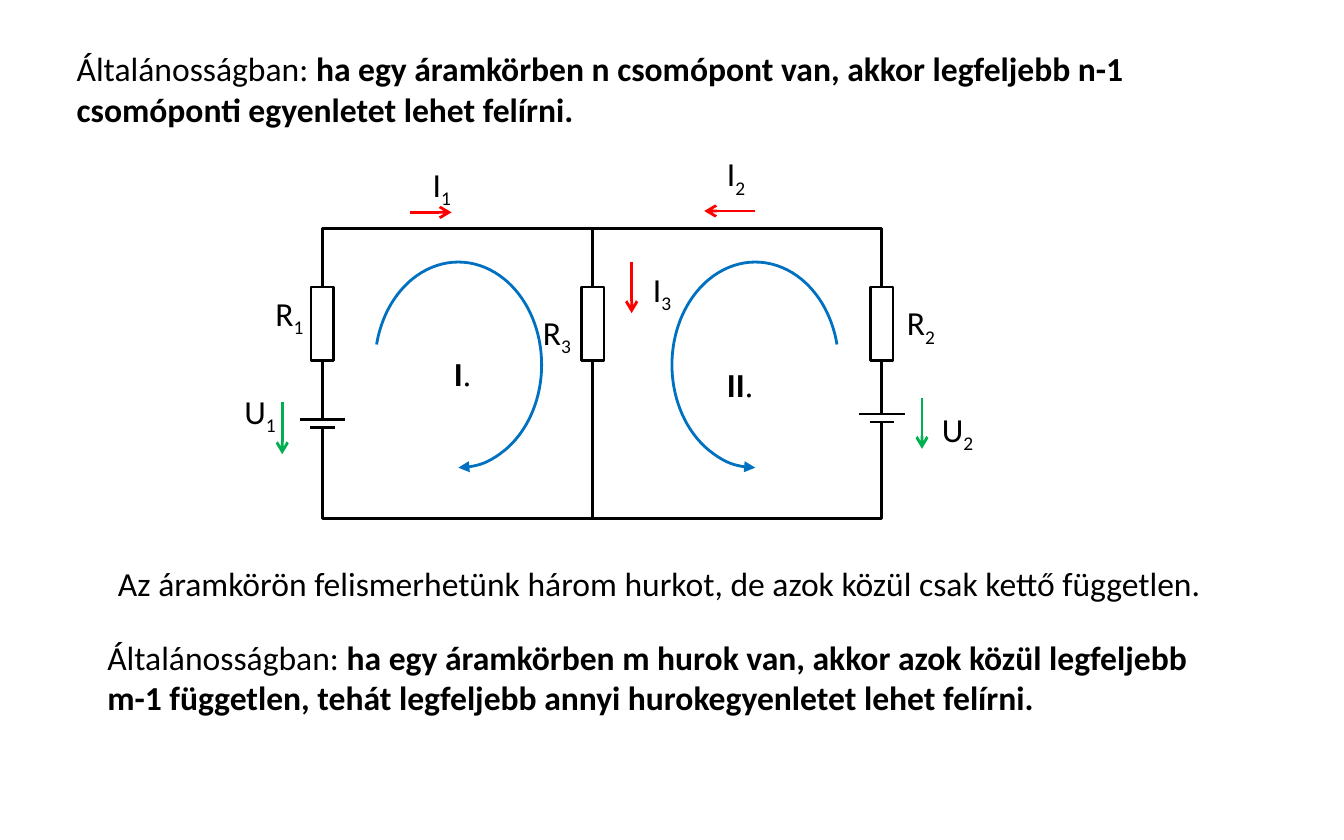
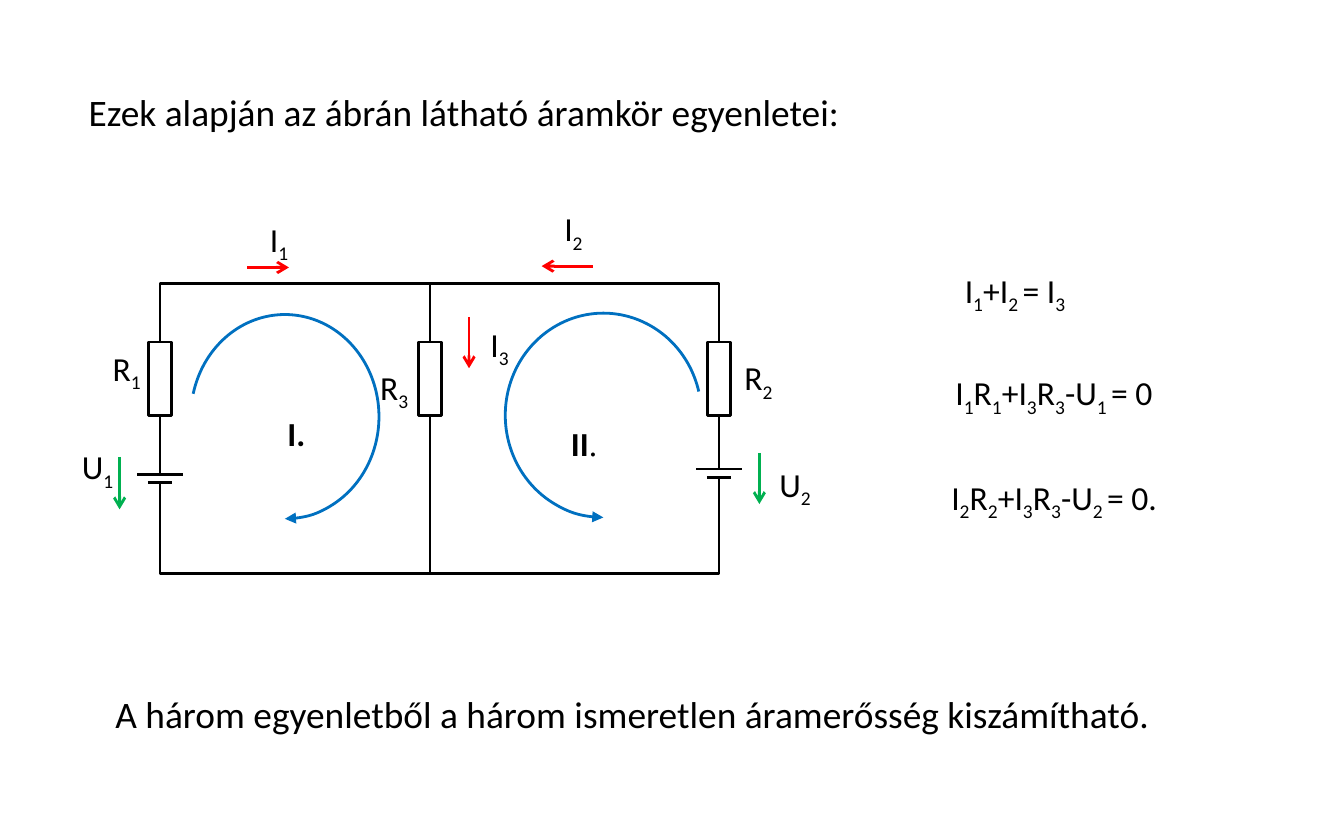
from dataclasses import dataclass

from pptx import Presentation
from pptx.dml.color import RGBColor
from pptx.enum import shapes, text
from pptx.oxml.ns import qn
from pptx.util import Inches, Pt
from lxml import etree


@dataclass(frozen=True)
class Theme:
    font: str = "Calibri"
    dot_font: str = "Times New Roman"
    ink: str = "000000"
    paper: str = "FFFFFF"
    current: str = "FF0000"
    voltage: str = "00B050"
    loop: str = "0070C0"
    body_size: int = 18
    large_size: int = 20
    line: float = 1.5
    thin_line: float = 0.75


THEME = Theme()
RECTANGLE = shapes.MSO_SHAPE.RECTANGLE


# Text helpers
def with_subscripts(formula):
    """Every second piece between bars is a subscript."""
    return [(piece, "sub" if index % 2 else "")
            for index, piece in enumerate(formula.split("|")) if piece]


def write(box, spans, size=THEME.body_size, space_after=0):
    frame = box.text_frame
    frame.word_wrap = True
    frame.vertical_anchor = text.MSO_ANCHOR.TOP
    para = frame.paragraphs[0]
    para.alignment = text.PP_ALIGN.LEFT
    para.space_after = Pt(space_after)
    for words, style in spans:
        span = para.add_run()
        span.text = words
        span.font.name = THEME.dot_font if style == "dot" else THEME.font
        span.font.size = Pt(size)
        span.font.bold = style == "bold"
        span.font.color.rgb = RGBColor.from_string(THEME.ink)
        if style == "sub":
            span._r.get_or_add_rPr().set("baseline", "-25000")


def add_title(page, area, spans, size):
    title = page.shapes.title
    title.left, title.top, title.width, title.height = map(Inches, area)
    write(title, spans, size)
    title.text_frame.auto_size = text.MSO_AUTO_SIZE.NONE


def add_text(page, area, spans, size=THEME.body_size):
    box = page.shapes.add_textbox(*map(Inches, area))
    write(box, spans, size)
    box.text_frame.auto_size = text.MSO_AUTO_SIZE.SHAPE_TO_FIT_TEXT


# Drawing helpers
def set_line(shape, color, width=THEME.line):
    shape.line.color.rgb = RGBColor.from_string(color)
    shape.line.width = Pt(width)


def add_arrowhead(shape, end, kind):
    etree.SubElement(shape.line._get_or_add_ln(), qn(f"a:{end}"), type=kind)


def add_block(parent, area, line=None, width=THEME.line):
    block = parent.shapes.add_shape(RECTANGLE, *map(Inches, area))
    block.shadow.inherit = False
    block.fill.solid()
    block.fill.fore_color.rgb = RGBColor.from_string(THEME.paper)
    if line:
        set_line(block, line, width)
    else:
        block.line.fill.background()
    return block


def add_line(parent, start, end, color=THEME.ink, arrow=False):
    line = parent.shapes.add_connector(
        shapes.MSO_CONNECTOR.STRAIGHT, *map(Inches, (*start, *end)))
    set_line(line, color)
    etree.SubElement(line._element.spPr, qn("a:effectLst"))
    if arrow:
        add_arrowhead(line, "tailEnd", "arrow")


# Circuit parts
def add_resistor(parent, x, y):
    width, height = 0.17, 0.55
    add_block(parent, (x - width / 2, y - height / 2, width, height), THEME.ink)


def add_battery(parent, x, y):
    long_half, short_half, gap = 0.17, 0.09, 0.06
    add_block(parent, (x - 0.08, y + 0.01, 0.16, 0.04),
              THEME.paper, THEME.thin_line)
    add_line(parent, (x - long_half, y), (x + long_half, y))
    add_line(parent, (x - short_half, y + gap), (x + short_half, y + gap))


# Arrows and labels, measured from the top left corner of the wire frame
ARROWS = [
    ((0.65, -0.12), (0.96, -0.12), THEME.current),
    ((3.22, -0.13), (2.84, -0.13), THEME.current),
    ((2.3, 0.25), (2.3, 0.63), THEME.current),
    ((4.46, 1.26), (4.46, 1.64), THEME.voltage),
    ((-0.3, 1.29), (-0.3, 1.68), THEME.voltage),
]
LABELS = [
    ("I|1", 0.72, -0.53, 0.71, 0.34),
    ("I|2", 2.91, -0.61, 0.69, 0.33),
    ("I|3", 2.36, 0.25, 0.56, 0.49),
    ("R|1", -0.45, 0.43, 0.47, 0.54),
    ("R|2", 4.25, 0.5, 0.57, 0.51),
    ("R|3", 1.54, 0.57, 0.49, 0.49),
    ("U|1", -0.68, 1.16, 0.49, 0.5),
    ("U|2", 4.51, 1.29, 0.61, 0.55),
]


def add_circuit(page, left, top):
    width, height, middle = 4.16, 2.16, 2.01
    group = page.shapes.add_group_shape()

    # Wires, resistors and batteries
    add_block(group, (left, top, width, height), THEME.ink)
    add_line(group, (left + middle, top), (left + middle, top + height))
    for x in (0, middle, width):
        add_resistor(group, left + x, top + 0.71)
    for x, y in ((0, 1.42), (width, 1.38)):
        add_battery(group, left + x, top + y)

    # Directions and names
    for (x1, y1), (x2, y2), color in ARROWS:
        add_line(group, (left + x1, top + y1), (left + x2, top + y2), color, True)
    for formula, x, y, *size in LABELS:
        box = group.shapes.add_textbox(*map(Inches, (left + x, top + y, *size)))
        write(box, with_subscripts(formula), space_after=10)


def add_loop(page, area, label_area, spans, clockwise):
    arc = page.shapes.add_shape(shapes.MSO_SHAPE.ARC, *map(Inches, area))
    arc.shadow.inherit = False
    arc.fill.background()
    set_line(arc, THEME.loop)
    degrees = (194, 90) if clockwise else (90, 346)
    for index, degree in enumerate(degrees):
        arc.adjustments[index] = degree * 0.6
    add_arrowhead(arc, "tailEnd" if clockwise else "headEnd", "triangle")
    write(add_block(page, label_area), spans, space_after=10)


# Slides
def add_rules_page(deck):
    page = deck.slides.add_slide(deck.slide_layouts[5])
    add_title(page, (0.47, 0.31, 9.14, 0.71), [
        ("Általánosságban: ", ""),
        ("ha egy áramkörben n csomópont van, akkor legfeljebb n-1 "
         "csomóponti egyenletet lehet felírni.", "bold")], THEME.body_size)
    add_circuit(page, 2.4, 1.7)
    add_text(page, (0.78, 4.14, 8.44, 0.4), [
        ("Az áramkörön felismerhetünk három hurkot, "
         "de azok közül csak kettő független.", "")])
    add_text(page, (0.7, 4.69, 8.44, 0.71), [
        ("Általánosságban: ", ""),
        ("ha egy áramkörben m hurok van, akkor azok közül legfeljebb m-1 "
         "független, tehát legfeljebb annyi hurokegyenletet lehet felírni.",
         "bold")])
    add_loop(page, (2.79, 1.95, 1.24, 1.53), (3.28, 2.58, 0.36, 0.35),
             [("I", "bold"), (".", "dot")], True)
    add_loop(page, (5, 1.95, 1.24, 1.53), (5.31, 2.66, 0.42, 0.32),
             [("II", "bold"), (".", "dot")], False)


def add_equations_page(deck):
    page = deck.slides.add_slide(deck.slide_layouts[5])
    add_title(page, (0.56, 0.61, 6.88, 0.44),
              [("Ezek alapján az ábrán látható áramkör egyenletei:", "")],
              THEME.large_size)
    equations = [
        ("I|1|+I|2 |= I|3", 7.08, 1.96, 1.31),
        ("I|1|R|1|+I|3|R|3|-U|1 |= 0", 7.01, 2.72, 1.86),
        ("I|2|R|2|+I|3|R|3|-U|2 |= 0.", 6.98, 3.5, 1.96),
    ]
    for formula, left, top, width in equations:
        add_text(page, (left, top, width, 0.4), with_subscripts(formula))
    add_circuit(page, 1.19, 2.11)
    add_loop(page, (1.42, 2.34, 1.4, 1.52), (2.04, 3.02, 0.36, 0.35),
             [("I.", "bold")], True)
    add_loop(page, (3.76, 2.33, 1.46, 1.52), (4.15, 3.1, 0.42, 0.32),
             [("II", "bold"), (".", "dot")], False)
    add_text(page, (0.76, 5.09, 8.11, 0.44),
             [("A három egyenletből a három ismeretlen áramerősség "
               "kiszámítható.", "")], THEME.large_size)


def main():
    deck = Presentation()
    deck.slide_width, deck.slide_height = Inches(10), Inches(6.25)
    add_rules_page(deck)
    add_equations_page(deck)
    deck.save("out.pptx")


if __name__ == "__main__":
    main()
